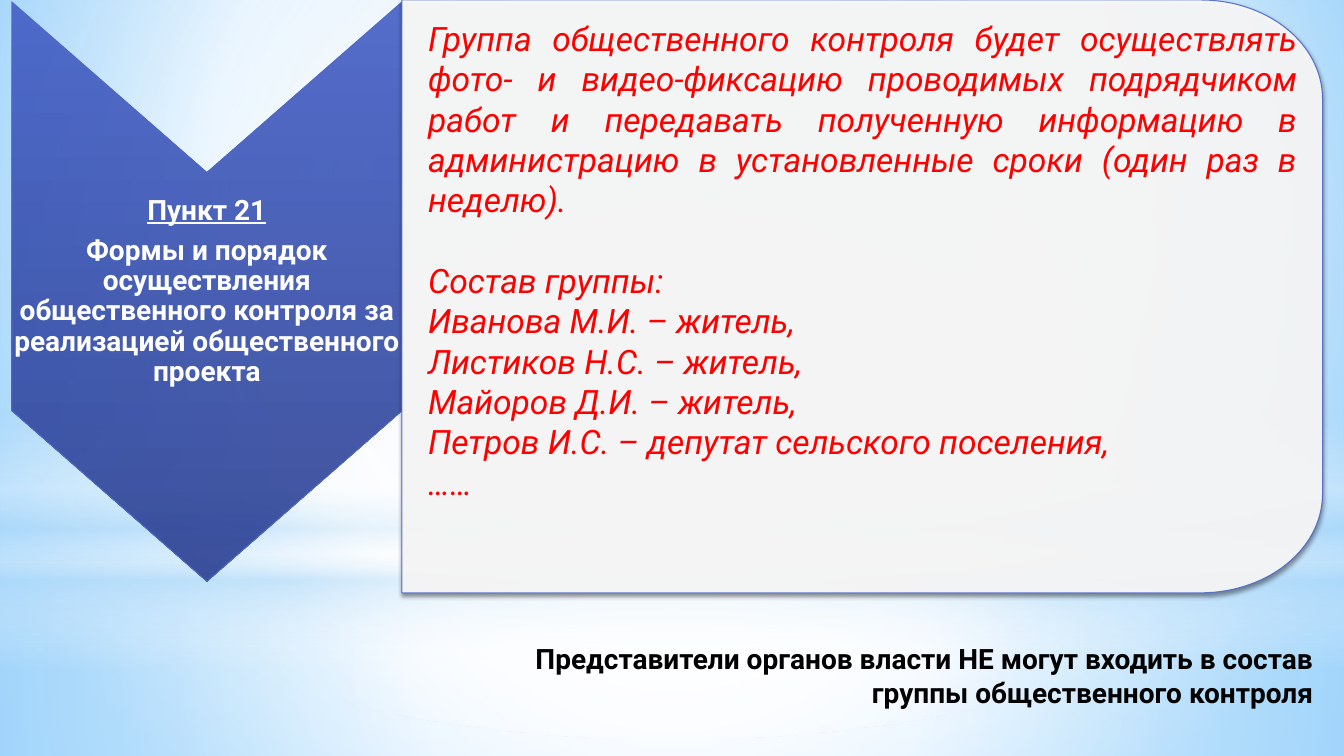
import math

from lxml import etree
from pptx import Presentation
from pptx.dml.color import RGBColor
from pptx.enum import shapes, text
from pptx.oxml import ns
from pptx.util import Cm, Pt

WHITE = RGBColor(0xFF, 0xFF, 0xFF)
BLACK = RGBColor(0x00, 0x00, 0x00)
RED = RGBColor(0xFF, 0x00, 0x00)
SKY = RGBColor(0x9E, 0xD5, 0xFF)
DEEP_SKY = RGBColor(0x5B, 0xB9, 0xFF)
PALE_BLUE = RGBColor(0xB4, 0xDC, 0xFA)
OUTLINE = RGBColor(0x4E, 0x67, 0xC8)
CHEVRON_TOP = RGBColor(0x43, 0x5E, 0xC5)
CHEVRON_BOTTOM = RGBColor(0x2B, 0x40, 0x92)

WIDTH, HEIGHT = 33.87, 19.05
HORIZON = 14.17
CENTER = (50, 50, 50, 50)

HEADING = "Пункт 21"
TOPIC = "Формы и порядок осуществления общественного контроля за реализацией общественного проекта"
DUTY = (
    "Группа общественного контроля будет осуществлять фото- и видео-фиксацию "
    "проводимых подрядчиком работ и передавать полученную информацию "
    "в администрацию в установленные сроки (один раз в неделю)."
)
MEMBERS = [
    "Состав группы:",
    "Иванова М.И. – житель,",
    "Листиков Н.С. – житель,",
    "Майоров Д.И. – житель,",
    "Петров И.С. – депутат сельского поселения,",
    "……",
]
WARNING = "Представители органов власти НЕ могут входить в состав группы общественного контроля"


def add_node(parent, tag, **attributes):
    """Append a drawing element with the given attributes."""
    node = etree.SubElement(parent, ns.qn(tag))
    for name, value in attributes.items():
        node.set(name, str(value))
    return node


def add_color(parent, color, opacity):
    """Append a colour with its opacity in percent."""
    node = add_node(parent, "a:srgbClr", val=color)
    add_node(node, "a:alpha", val=opacity * 1000)


def set_gradient(owner, fill, stops, angle=None, focus=CENTER):
    """Fill with (position, colour, opacity) stops, linear if an angle is given."""
    fill.gradient()
    gradient = next(owner.element.iter(ns.qn("a:gradFill")))
    for child in list(gradient):
        gradient.remove(child)
    stop_list = add_node(gradient, "a:gsLst")
    for position, color, opacity in stops:
        add_color(add_node(stop_list, "a:gs", pos=position * 1000), color, opacity)
    if angle is None:
        path_node = add_node(gradient, "a:path", path="circle")
        sides = {side: share * 1000 for side, share in zip("ltrb", focus)}
        add_node(path_node, "a:fillToRect", **sides)
    else:
        add_node(gradient, "a:lin", ang=angle * 60000, scaled=0)


def set_outline(shape):
    """Give a shape the thin blue outline."""
    shape.line.color.rgb = OUTLINE
    shape.line.width = Pt(0.75)
    color = next(shape.line._ln.iter(ns.qn("a:srgbClr")))
    add_node(color, "a:alpha", val=90000)


def add_outline_shape(slide, points):
    """Add a closed freeform through points given in centimetres."""
    corners = [(Cm(x), Cm(y)) for x, y in points]
    builder = slide.shapes.build_freeform(*corners[0])
    builder.add_line_segments(corners[1:], close=True)
    shape = builder.convert_to_shape()
    shape.shadow.inherit = False
    set_outline(shape)
    return shape


def write(frame, content, *, size, color, align, bold=False, italic=False,
          underline=False, spacing=None, before=0, after=0):
    """Write one formatted paragraph, using the first one while it is empty."""
    paragraph = frame.paragraphs[0]
    if paragraph.runs:
        paragraph = frame.add_paragraph()
    paragraph.alignment = align
    paragraph.line_spacing = spacing
    paragraph.space_before, paragraph.space_after = Pt(before), Pt(after)
    run = paragraph.add_run()
    run.text = content
    font = run.font
    font.name, font.size, font.color.rgb = "Roboto", Pt(size), color
    font.bold, font.italic, font.underline = bold, italic, underline


def add_text_frame(slide, left, top, width, height):
    """Add a wrapping text box and return its frame."""
    box = slide.shapes.add_textbox(Cm(left), Cm(top), Cm(width), Cm(height))
    box.text_frame.word_wrap = True
    return box.text_frame


def add_glow(slide, left, top, width, height, stops, angle=None,
             kind=shapes.MSO_SHAPE.RECTANGLE):
    """Add one translucent layer of the backdrop."""
    shape = slide.shapes.add_shape(kind, Cm(left), Cm(top), Cm(width), Cm(height))
    shape.shadow.inherit = False
    shape.line.fill.background()
    set_gradient(shape, shape.fill, stops, angle)


def add_backdrop(slide, width, height):
    """Paint the sky background and its layers of light."""
    set_gradient(slide, slide.background.fill,
                 [(0, SKY, 100), (60, WHITE, 100), (100, DEEP_SKY, 100)],
                 focus=(20, 10, 20, 60))
    add_glow(slide, 0, HORIZON, width, height - HORIZON,
             [(0, WHITE, 91), (37, WHITE, 76), (100, PALE_BLUE, 79)])
    add_glow(slide, 0, 0, width, HORIZON,
             [(0, WHITE, 89), (48, WHITE, 62), (100, PALE_BLUE, 79)])
    add_glow(slide, 0, 10.46, width, 6.35,
             [(0, WHITE, 0), (29, WHITE, 30), (45, PALE_BLUE, 40),
              (55, WHITE, 26), (65, PALE_BLUE, 60), (100, WHITE, 0)], angle=90)
    add_glow(slide, 0, 4.45, width, HORIZON, [(0, WHITE, 100), (56, WHITE, 0)],
             kind=shapes.MSO_SHAPE.OVAL)


def add_chevron(slide, left, top, width, height, notch=4.3):
    """Add the downward chevron with the heading and topic."""
    right, middle, bottom = left + width, left + width / 2, top + height
    shape = add_outline_shape(slide, [
        (right, top), (right, bottom - notch), (middle, bottom),
        (left, bottom - notch), (left, top), (middle, top + notch)])
    set_gradient(shape, shape.fill,
                 [(0, CHEVRON_TOP, 90), (100, CHEVRON_BOTTOM, 90)], angle=90)
    frame = shape.text_frame
    frame.word_wrap = True
    frame.vertical_anchor = text.MSO_ANCHOR.MIDDLE
    frame.margin_left = frame.margin_right = Cm(0.05)
    frame.margin_top = frame.margin_bottom = Cm(4.62)
    for content, underline in ((HEADING, True), (TOPIC, False)):
        write(frame, content, size=20, color=WHITE, align=text.PP_ALIGN.CENTER,
              bold=True, underline=underline, spacing=0.9, after=7)


def add_panel(slide, left, top, width, height, radius_x=3.07, radius_y=2.49):
    """Add the white panel with rounded right corners and its text."""
    right, bottom = left + width, top + height
    turns = [math.radians(angle) for angle in range(0, 91, 3)]
    upper = [(right - radius_x * (1 - math.sin(turn)),
              top + radius_y * (1 - math.cos(turn))) for turn in turns]
    lower = [(x, top + bottom - y) for x, y in reversed(upper)]
    shape = add_outline_shape(slide, [(left, top), *upper, *lower, (left, bottom)])
    shape.fill.solid()
    shape.fill.fore_color.rgb = WHITE
    add_node(next(shape.element.iter(ns.qn("a:srgbClr"))), "a:alpha", val=90000)
    effects = next(shape.element.iter(ns.qn("a:effectLst")))
    shadow = add_node(effects, "a:outerShdw", blurRad=Pt(3.1), dist=Pt(1.8),
                      dir=90 * 60000, rotWithShape=0)
    add_color(shadow, BLACK, 45)

    frame = add_text_frame(slide, left + 0.41, top + 0.33, width - 0.8, 12.57)
    for index, content in enumerate([DUTY, *MEMBERS]):
        write(frame, content, size=24, color=RED, align=text.PP_ALIGN.JUSTIFY,
              italic=True, before=28.8 if index == 1 else 0)


def add_warning(slide, left, top, width, height):
    """Add the right-aligned warning below the panel."""
    frame = add_text_frame(slide, left, top, width, height)
    write(frame, WARNING, size=20, color=BLACK, align=text.PP_ALIGN.RIGHT, bold=True)


def main():
    """Build the slide and save it."""
    presentation = Presentation()
    presentation.slide_width, presentation.slide_height = Cm(WIDTH), Cm(HEIGHT)
    slide = presentation.slides.add_slide(presentation.slide_layouts[6])
    add_backdrop(slide, WIDTH, HEIGHT)
    add_chevron(slide, 0.3, 0.05, 9.83, 14.6)
    add_panel(slide, 10.13, 0, 23.2, 14.94)
    add_warning(slide, 12.98, 16.05, 20.37, 1.96)
    presentation.save("out.pptx")


if __name__ == "__main__":
    main()
